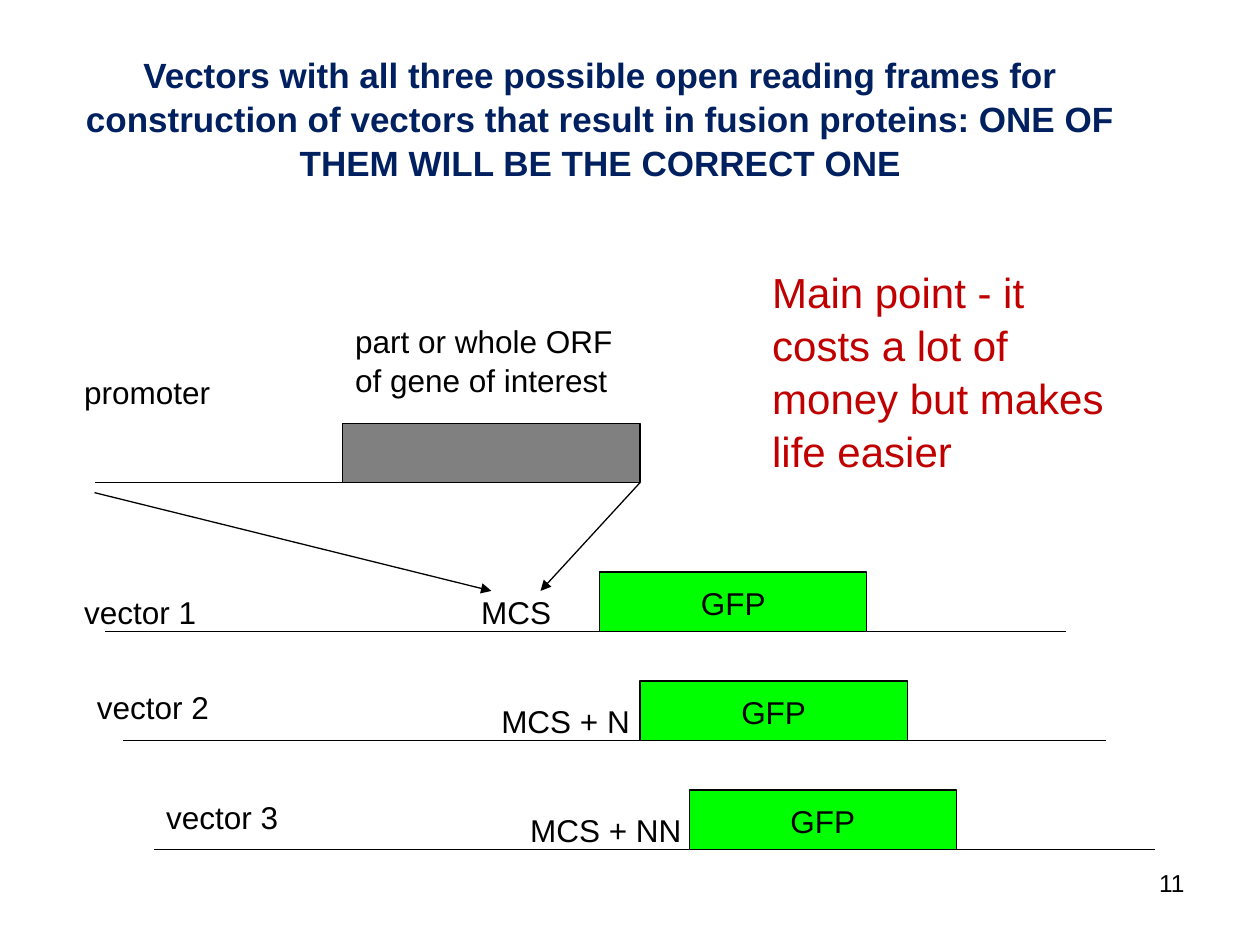
from pptx import Presentation
from pptx.dml.color import RGBColor
from pptx.enum.shapes import MSO_CONNECTOR, MSO_SHAPE
from pptx.enum.text import MSO_ANCHOR, PP_ALIGN
from pptx.oxml.ns import qn
from pptx.util import Inches, Pt
from lxml.etree import SubElement

COLORS = {"black": "000000", "navy": "002060", "red": "C00000",
          "gray": "808080", "green": "00FF00"}

prs = Presentation()
prs.slide_width, prs.slide_height = Inches(10), Inches(7.5)
s = prs.slides.add_slide(prs.slide_layouts[6])
U = prs.slide_width / 100  # grid of 100 columns by 75 square rows


def add_block(x, y, w, h, text="", fill=None, size=18, color="black",
              align=PP_ALIGN.LEFT, bold=False, wrap=False):
    """Add a text box, or an outlined rectangle when a fill is given."""
    box = [round(v * U) for v in (x, y, w, h)]
    if fill:
        sp = s.shapes.add_shape(MSO_SHAPE.RECTANGLE, *box)
        sp.shadow.inherit = False
        sp.fill.solid()
        sp.fill.fore_color.rgb = RGBColor.from_string(COLORS[fill])
        sp.line.color.rgb = RGBColor.from_string(COLORS["black"])
        sp.line.width = Pt(0.75)
    else:
        sp = s.shapes.add_textbox(*box)
    tf = sp.text_frame
    tf.word_wrap = wrap
    tf.vertical_anchor = MSO_ANCHOR.MIDDLE if fill else MSO_ANCHOR.TOP
    tf.text = text
    for p in tf.paragraphs:
        p.alignment = align
        p.line_spacing = 1.05
        for r in p.runs:
            r.font.name, r.font.size, r.font.bold = "Arial", Pt(size), bold
            r.font.color.rgb = RGBColor.from_string(COLORS[color])


def add_line(x1, y1, x2, y2, arrow=False):
    c = s.shapes.add_connector(MSO_CONNECTOR.STRAIGHT,
                               *[round(v * U) for v in (x1, y1, x2, y2)])
    c.line.color.rgb = RGBColor.from_string(COLORS["black"])
    c.line.width = Pt(0.75)
    if arrow:
        SubElement(c.line._get_or_add_ln(), qn("a:tailEnd"), type="triangle")
    SubElement(c._element.spPr, qn("a:effectLst"))


# Title and comment
add_block(3.6, 3.6, 88.1, 11.1,
          "Vectors with all three possible open reading frames for construction "
          "of vectors that result in fusion proteins: ONE OF THEM WILL BE THE "
          "CORRECT ONE",
          size=20, color="navy", align=PP_ALIGN.CENTER, bold=True, wrap=True)
add_block(60.3, 20.5, 30.1, 17.2,
          "Main point - it costs a lot of money but makes life easier",
          size=24, color="red", wrap=True)

# Insert: promoter and gene of interest
add_block(27.2, 33.6, 23.6, 4.7, fill="gray")
add_line(27.2, 38.3, 7.5, 38.3)
add_block(5.7, 29, 12, 4, "promoter")
add_block(27.2, 24.9, 22.4, 7, "part or whole ORF\nof gene of interest")

# Vectors, each with its own reading frame
GFP_W, GFP_H, TAIL, STEP = 21.2, 4.7, 15.8, 8.65
vectors = [  # name, name x, name y, site, site x, site width, line x, GFP x
    ("vector 1", 5.7, 46.4, "MCS", 37.2, 7.6, 8.3, 47.6),
    ("vector 2", 6.7, 54, "MCS + N", 38.8, 12.2, 9.8, 50.8),
    ("vector 3", 12.2, 62.7, "MCS + NN", 41.1, 14, 12.2, 54.7),
]
for i, (name, name_x, name_y, site, site_x, site_w, line_x, gfp_x) in enumerate(vectors):
    base = 50.1 + i * STEP
    gfp_end = gfp_x + GFP_W
    add_block(gfp_x, base - GFP_H, GFP_W, GFP_H, "GFP", fill="green",
              align=PP_ALIGN.CENTER)
    add_line(gfp_end, base, gfp_end + TAIL, base)
    add_line(gfp_x, base, line_x, base)
    add_block(name_x, name_y, 10.9, 4, name)
    add_block(site_x, base - 3.7, site_w, 4, site)

# Insertion into the cloning site
add_line(7.5, 39.1, 39, 46.9, arrow=True)
add_line(50.8, 38.3, 42.9, 46.9, arrow=True)

# Slide number
add_block(71.7, 68.3, 23.3, 5.2, "11", size=14, align=PP_ALIGN.RIGHT, wrap=True)

prs.save("out.pptx")
